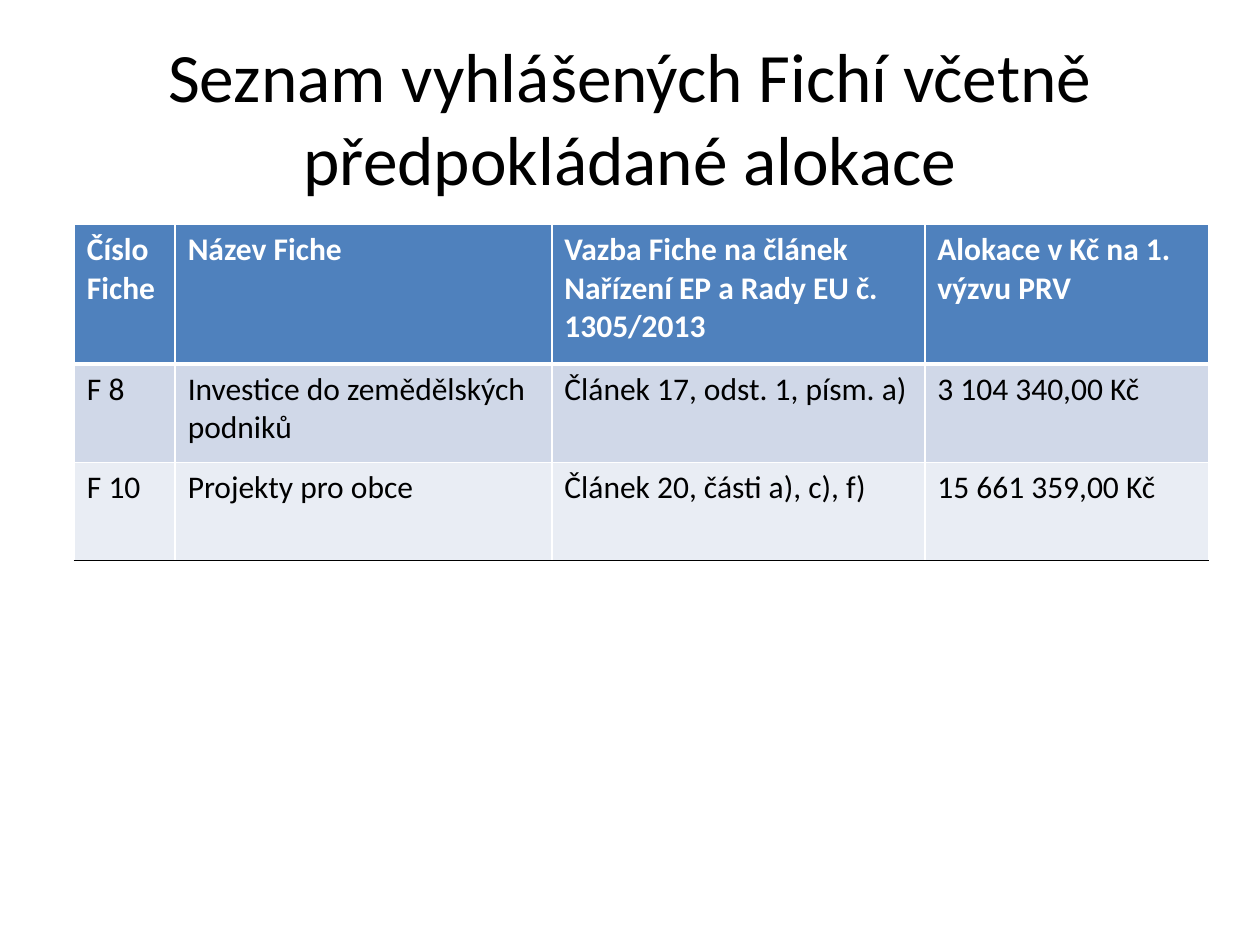
from lxml import etree
from pptx import Presentation
from pptx.dml.color import RGBColor
from pptx.enum import text
from pptx.oxml import ns
from pptx.util import Inches, Pt

# Content
TITLE = "Seznam vyhlášených Fichí včetně předpokládané alokace"
ROWS = [
    ("Číslo Fiche", "Název Fiche",
     "Vazba Fiche na článek Nařízení EP a Rady EU č. 1305/2013",
     "Alokace v Kč na 1. výzvu PRV"),
    ("F 8", "Investice do zemědělských podniků",
     "Článek 17, odst. 1, písm. a)", "3 104 340,00 Kč"),
    ("F 10", "Projekty pro obce",
     "Článek 20, části a), c), f)", "15 661 359,00 Kč"),
]
COLUMN_WIDTHS = [0.8, 2.99, 2.96, 2.25]
ROW_HEIGHTS = [1.11, 0.78, 0.78]

# Style
FONT = "Calibri"
BLACK = RGBColor(0x00, 0x00, 0x00)
WHITE = RGBColor(0xFF, 0xFF, 0xFF)
BLUE = RGBColor(0x4F, 0x81, 0xBD)
BAND_DARK = RGBColor(0xD0, 0xD8, 0xE8)
BAND_LIGHT = RGBColor(0xE9, 0xED, 0xF4)
ROW_FILLS = [BLUE, BAND_DARK, BAND_LIGHT]
# Horizontal rules from the top edge to the bottom edge: colour, points
RULES = [(WHITE, 1), (WHITE, 3), (WHITE, 1), (BLACK, 1)]


def write(frame, content, size, color=BLACK, bold=False,
          align=text.PP_ALIGN.LEFT):
    para = frame.paragraphs[0]
    para.alignment = align
    span = para.add_run()
    span.text = content
    span.font.name = FONT
    span.font.size = Pt(size)
    span.font.bold = bold
    span.font.color.rgb = color


def set_border(cell, side, color, width):
    properties = cell._tc.get_or_add_tcPr()
    line = etree.SubElement(properties, ns.qn("a:ln" + side), w=str(Pt(width)))
    fill = etree.SubElement(line, ns.qn("a:solidFill"))
    etree.SubElement(fill, ns.qn("a:srgbClr"), val=str(color))


deck = Presentation()
deck.slide_width, deck.slide_height = Inches(10), Inches(7.5)
page = deck.slides.add_slide(deck.slide_layouts[5])

# Title
title = page.shapes.title
title.left, title.top = Inches(0.5), Inches(0.3)
title.width, title.height = Inches(9), Inches(1.25)
title.text_frame.word_wrap = True
title.text_frame.auto_size = text.MSO_AUTO_SIZE.NONE
title.text_frame.vertical_anchor = text.MSO_ANCHOR.MIDDLE
write(title.text_frame, TITLE, 39.6, align=text.PP_ALIGN.CENTER)

# Table
table = page.shapes.add_table(
    len(ROWS), len(COLUMN_WIDTHS), Inches(0.59), Inches(1.78),
    Inches(sum(COLUMN_WIDTHS)), Inches(sum(ROW_HEIGHTS))).table
for column, width in zip(table.columns, COLUMN_WIDTHS):
    column.width = Inches(width)
for row, height in zip(table.rows, ROW_HEIGHTS):
    row.height = Inches(height)

# Cells: borders come before the fill in the cell properties
for r, values in enumerate(ROWS):
    header = r == 0
    for c, value in enumerate(values):
        cell = table.cell(r, c)
        borders = {"L": (WHITE, 1), "R": (WHITE, 1),
                   "T": RULES[r], "B": RULES[r + 1]}
        for side, (color, width) in borders.items():
            set_border(cell, side, color, width)
        cell.fill.solid()
        cell.fill.fore_color.rgb = ROW_FILLS[r]
        write(cell.text_frame, value, 18, bold=header,
              color=WHITE if header else BLACK)

deck.save("out.pptx")
